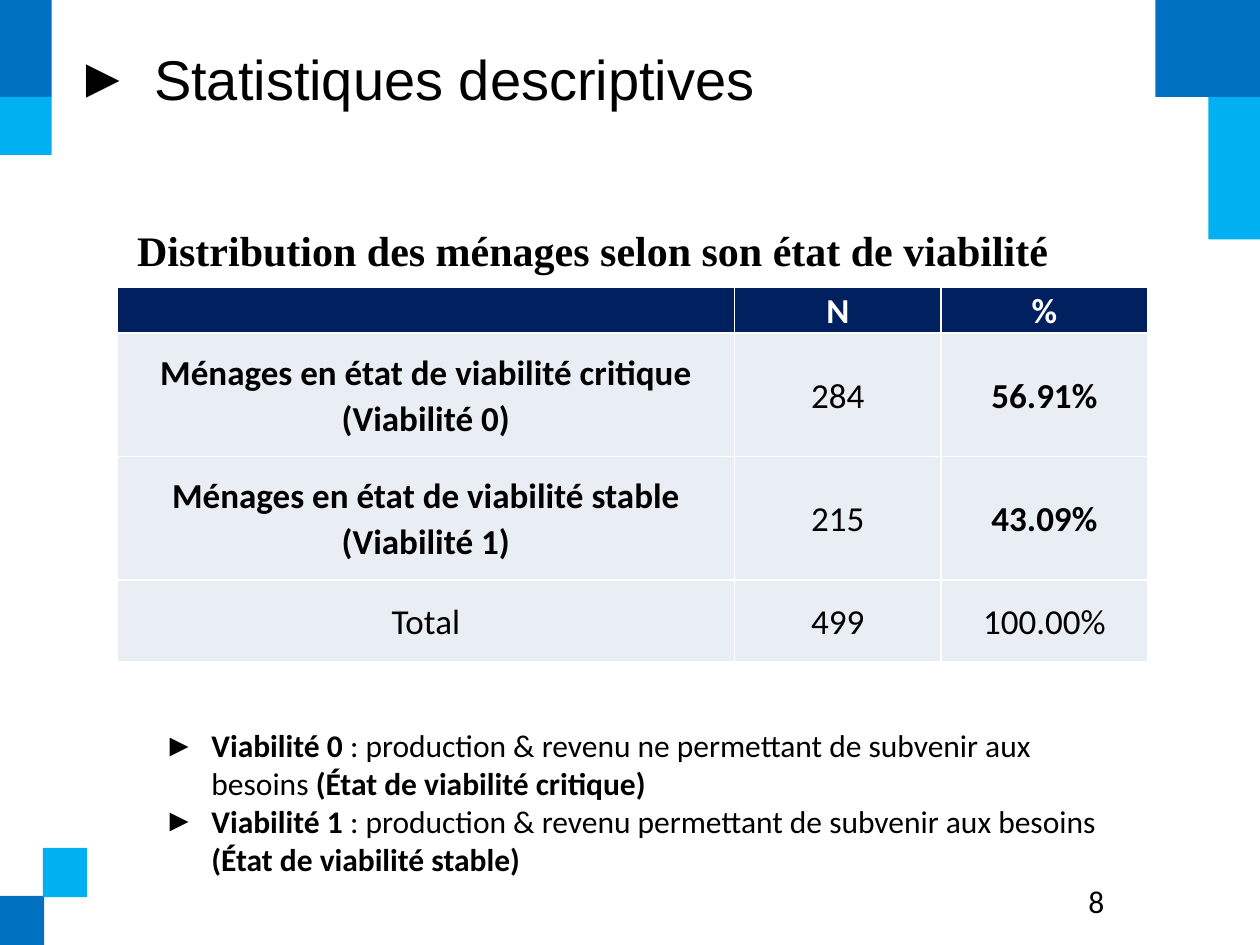
from lxml import etree
from pptx import Presentation
from pptx.dml.color import RGBColor
from pptx.enum import shapes, text
from pptx.oxml import ns
from pptx.util import Inches, Pt

BLACK = RGBColor(0, 0, 0)
WHITE = RGBColor(255, 255, 255)
NAVY = RGBColor(0x00, 0x20, 0x60)
BLUE = RGBColor(0x00, 0x70, 0xC0)
SKY = RGBColor(0x00, 0xB0, 0xF0)
PALE = RGBColor(0xE9, 0xED, 0xF4)

# Corner blocks: left, top, width, height, colour
BLOCKS = [
    (9.59, 0, 0.41, 1.9, SKY),
    (9.17, 0, 0.83, 0.77, BLUE),
    (0, 0, 0.41, 0.77, BLUE),
    (0, 0.77, 0.41, 0.46, SKY),
    (0, 7.11, 0.35, 0.39, BLUE),
    (0.34, 6.73, 0.35, 0.39, SKY),
]

# Each row: label lines, count, share
ROWS = [
    ([""], "N", "%"),
    (["Ménages en état de viabilité critique", "(Viabilité 0)"], "284", "56.91%"),
    (["Ménages en état de viabilité stable", "(Viabilité 1)"], "215", "43.09%"),
    (["Total"], "499", "100.00%"),
]
COLS = [4.9, 1.64, 1.64]
HEIGHTS = [0.35, 0.98, 0.98, 0.65]

# Each note: term, meaning, state
NOTES = [
    ("Viabilité 0", "production & revenu ne permettant de subvenir aux besoins",
     "(État de viabilité critique)"),
    ("Viabilité 1", "production & revenu permettant de subvenir aux besoins",
     "(État de viabilité stable)"),
]


def add_bullet(para, indent):
    props = para._p.get_or_add_pPr()
    props.set("marL", str(Inches(indent)))
    props.set("indent", str(-Inches(indent)))
    etree.SubElement(props, ns.qn("a:buFont")).set("typeface", "Arial")
    etree.SubElement(props, ns.qn("a:buChar")).set("char", "►")


def put_text(frame, paras, size=18, font="Calibri", color=BLACK,
             align=text.PP_ALIGN.LEFT, spacing=None, indent=None):
    """Fill a frame; each paragraph is a list of (words, bold) runs."""
    for i, runs in enumerate(paras):
        para = frame.paragraphs[0] if i == 0 else frame.add_paragraph()
        para.alignment = align
        if spacing:
            para.line_spacing = spacing
        if indent:
            add_bullet(para, indent)
        for words, bold in runs:
            run = para.add_run()
            run.text = words
            run.font.size = Pt(size)
            run.font.name = font
            run.font.bold = bold
            run.font.color.rgb = color


def add_block(slide, left, top, width, height, color):
    block = slide.shapes.add_shape(
        shapes.MSO_SHAPE.RECTANGLE,
        Inches(left), Inches(top), Inches(width), Inches(height))
    block.shadow.inherit = False
    block.fill.solid()
    block.fill.fore_color.rgb = color
    block.line.fill.background()


def add_label(slide, left, top, width, height, paras,
              anchor=text.MSO_ANCHOR.MIDDLE, **style):
    box = slide.shapes.add_textbox(
        Inches(left), Inches(top), Inches(width), Inches(height))
    frame = box.text_frame
    frame.word_wrap = True
    frame.vertical_anchor = anchor
    put_text(frame, paras, **style)


def set_title(slide, words):
    title = slide.shapes.title
    title.left, title.top = Inches(0.5), Inches(0.3)
    title.width, title.height = Inches(9), Inches(0.85)
    frame = title.text_frame
    frame.auto_size = text.MSO_AUTO_SIZE.NONE
    frame.vertical_anchor = text.MSO_ANCHOR.TOP
    put_text(frame, [[(words, False)]], size=32, font="Arial", indent=0.5)


def add_borders(cell, color):
    props = cell._tc.get_or_add_tcPr()
    for i, side in enumerate(("lnL", "lnR", "lnT", "lnB")):
        line = etree.Element(ns.qn(f"a:{side}"), w=str(Pt(1)))
        fill = etree.SubElement(line, ns.qn("a:solidFill"))
        etree.SubElement(fill, ns.qn("a:srgbClr")).set("val", str(color))
        props.insert(i, line)


def fill_cell(cell, lines, bold, fill, color):
    cell.margin_left = cell.margin_right = Inches(0.08)
    cell.margin_top = cell.margin_bottom = 0
    cell.vertical_anchor = text.MSO_ANCHOR.MIDDLE
    cell.fill.solid()
    cell.fill.fore_color.rgb = fill
    add_borders(cell, WHITE)
    put_text(cell.text_frame, [[(line, bold)] for line in lines], size=20,
             color=color, align=text.PP_ALIGN.CENTER, spacing=1.07)


def add_stats(slide):
    table = slide.shapes.add_table(
        len(ROWS), len(COLS), Inches(0.93), Inches(2.28),
        Inches(sum(COLS)), Inches(sum(HEIGHTS))).table
    for col, width in zip(table.columns, COLS):
        col.width = Inches(width)
    for row, height in zip(table.rows, HEIGHTS):
        row.height = Inches(height)
    for r, (label, count, share) in enumerate(ROWS):
        head, total = r == 0, r == len(ROWS) - 1
        for c, lines in enumerate((label, [count], [share])):
            # The header is bold; counts and the total row are plain
            bold = head or (c != 1 and not total)
            fill_cell(table.cell(r, c), lines, bold,
                      NAVY if head else PALE, WHITE if head else BLACK)


def main():
    deck = Presentation()
    deck.slide_width, deck.slide_height = Inches(10), Inches(7.5)
    slide = deck.slides.add_slide(deck.slide_layouts[5])

    # Corner decoration
    for block in BLOCKS:
        add_block(slide, *block)

    # Table and its caption
    add_stats(slide)
    caption = "Distribution des ménages selon son état de viabilité"
    add_label(slide, 0.99, 1.73, 7.69, 0.5, [[(caption, True)]],
              size=24, font="Times New Roman")

    # Title, notes and page number
    set_title(slide, " Statistiques descriptives")
    notes = [[(term, True), (f" : {meaning} ", False), (state, True)]
             for term, meaning, state in NOTES]
    add_label(slide, 1.2, 5.71, 7.9, 1.31, notes, indent=0.38)
    add_label(slide, 8.54, 6.95, 0.96, 0.4, [[("8", False)]],
              anchor=text.MSO_ANCHOR.TOP)

    deck.save("out.pptx")


if __name__ == "__main__":
    main()
